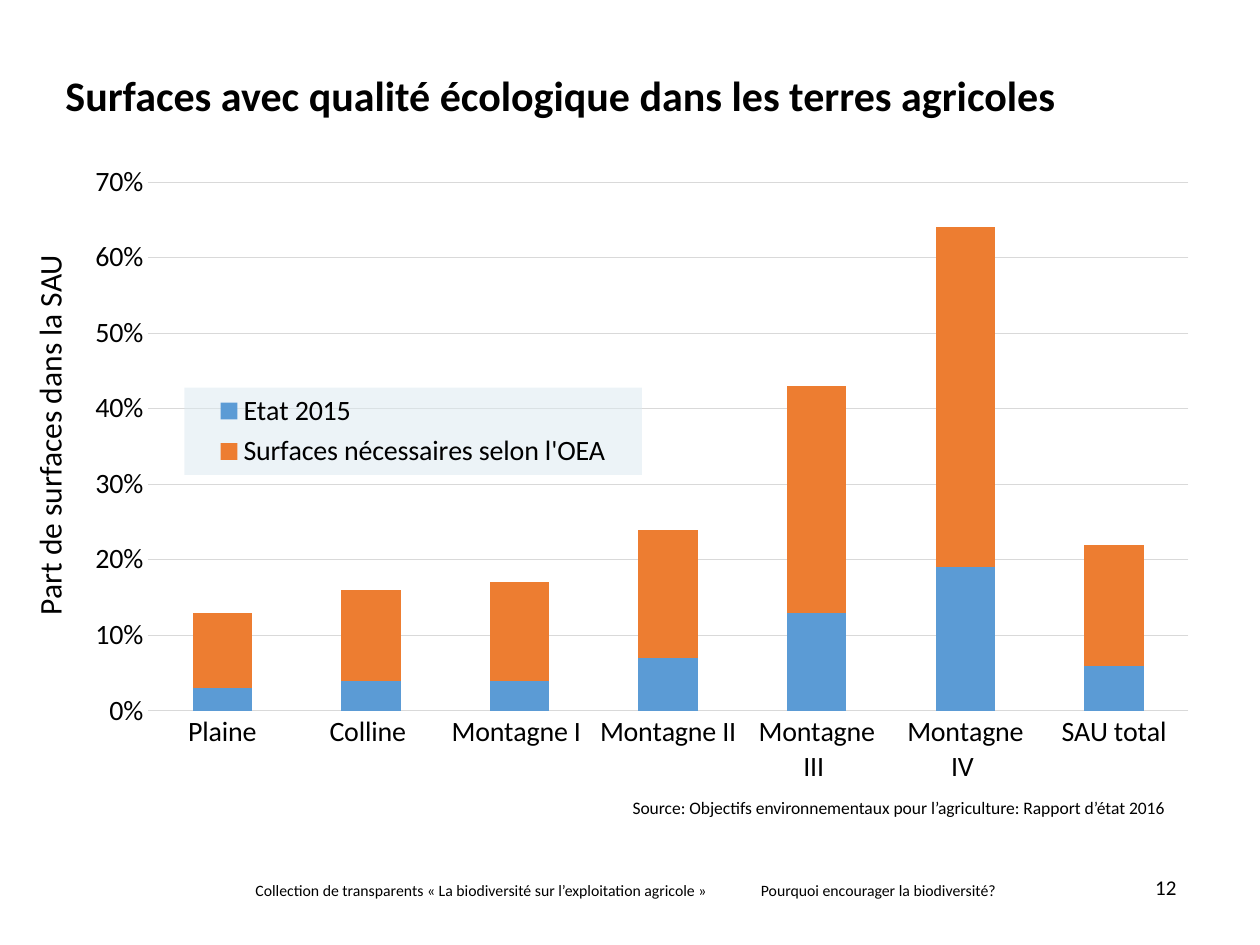
"""Build the slide on ecological quality areas in farmland, with a stacked column chart."""
from dataclasses import dataclass

import pptx
import pptx.chart.data
import pptx.dml.color
import pptx.enum.chart
import pptx.enum.text
import pptx.oxml
import pptx.oxml.ns
import pptx.util

Cm = pptx.util.Cm
Pt = pptx.util.Pt
RGB = pptx.dml.color.RGBColor.from_string
ALIGN = pptx.enum.text.PP_ALIGN
ANCHOR = pptx.enum.text.MSO_ANCHOR
XL = pptx.enum.chart


@dataclass(frozen=True)
class Theme:
    font: str = "Calibri"
    text: str = "000000"
    grid: str = "D9D9D9"
    legend: str = "DBE9F0"
    state: str = "5B9BD5"
    needed: str = "ED7D31"
    title: float = 24
    axis_title: float = 18
    chart: float = 16
    number: float = 12
    source: float = 10
    footer: float = 9


theme = Theme()
prs = pptx.Presentation()
prs.slide_width, prs.slide_height = Cm(25.4), Cm(19.05)
s = prs.slides.add_slide(prs.slide_layouts[6])


def add_text(text, *, box, size, bold=False, align=ALIGN.LEFT, anchor=ANCHOR.TOP,
             inset=(0.25, 0.13), spacing=None, wrap=True, rotation=0):
    sp = s.shapes.add_textbox(*map(Cm, box))
    sp.rotation = rotation
    tf = sp.text_frame
    tf.word_wrap = wrap
    tf.vertical_anchor = anchor
    tf.margin_left = tf.margin_right = Cm(inset[0])
    tf.margin_top = tf.margin_bottom = Cm(inset[1])
    p = tf.paragraphs[0]
    p.alignment = align
    p.line_spacing = spacing
    r = p.add_run()
    r.text = text
    r.font.name = theme.font
    r.font.size = Pt(size)
    r.font.bold = bold
    r.font.color.rgb = RGB(theme.text)
    return r


add_text("Collection de transparents « La biodiversité sur l’exploitation agricole »",
         box=(4.9, 17.63, 10.59, 0.64), size=theme.footer)
add_text("Pourquoi encourager la biodiversité?",
         box=(15.09, 17.63, 5.36, 0.64), size=theme.footer)
add_text("Surfaces avec qualité écologique dans les terres agricoles",
         box=(1.32, 1.52, 22.4, 1.75), size=theme.title, bold=True, inset=(0, 0), spacing=0.9)
add_text("Source: Objectifs environnementaux pour l’agriculture: Rapport d’état 2016",
         box=(12.09, 15.93, 11.63, 0.69), size=theme.source, align=ALIGN.RIGHT)
number = add_text("12", box=(21.51, 17.27, 2.21, 0.99), size=theme.number,
                  align=ALIGN.RIGHT, anchor=ANCHOR.BOTTOM, inset=(0, 0.13))
number.font._element.set("spc", "20")
add_text("Part de surfaces dans la SAU", box=(-2.97, 8.18, 7.92, 1.02),
         size=theme.axis_title, wrap=False, rotation=270)

data = pptx.chart.data.CategoryChartData(number_format="0%")
data.categories = ["Plaine", "Colline ", "Montagne I ", "Montagne II ",
                   "Montagne III ", "Montagne IV ", "SAU total"]
data.add_series("Etat 2015", [0.03, 0.04, 0.04, 0.07, 0.13, 0.19, 0.06])
data.add_series("Surfaces nécessaires selon l'OEA", [0.1, 0.12, 0.13, 0.17, 0.3, 0.45, 0.16])
chart = s.shapes.add_chart(XL.XL_CHART_TYPE.COLUMN_STACKED, Cm(1.3), Cm(3.33),
                           Cm(23.7), Cm(12.6), data).chart
chart.has_title = False
chart.font.name = theme.font
chart.font.size = Pt(theme.chart)
chart.font.color.rgb = RGB(theme.text)

plot = chart.plots[0]
plot.gap_width, plot.overlap, plot.vary_by_categories = 150, 100, False
for series, color in zip(plot.series, (theme.state, theme.needed)):
    series.format.fill.solid()
    series.format.fill.fore_color.rgb = RGB(color)

cat_axis, val_axis = chart.category_axis, chart.value_axis
for axis in (cat_axis, val_axis):
    axis.major_tick_mark = axis.minor_tick_mark = XL.XL_TICK_MARK.NONE
val_axis.minimum_scale, val_axis.maximum_scale, val_axis.major_unit = 0, 0.7, 0.1
val_axis.tick_labels.number_format = "0%"
val_axis.tick_labels.number_format_is_linked = False
val_axis.format.line.fill.background()
for line in (cat_axis.format.line, val_axis.major_gridlines.format.line):
    line.color.rgb = RGB(theme.grid)
    line.width = Pt(0.75)

chart.has_legend = True
legend = chart.legend
legend.position = XL.XL_LEGEND_POSITION.BOTTOM
legend.include_in_layout = False

ns = pptx.oxml.ns.nsdecls("c", "a")
qn = pptx.oxml.ns.qn
plot_area = chart._chartSpace.chart.plotArea
for old in plot_area.findall(qn("c:layout")):
    plot_area.remove(old)
for old in legend._element.findall(qn("c:layout")):
    legend._element.remove(old)
layouts = (
    (plot_area, 0, '<c:layoutTarget val="inner"/>', (0.071, 0.026, 0.885, 0.847)),
    (legend._element, 1, "", (0.102, 0.355, 0.389, 0.14)),
)
for parent, index, target, (x, y, w, h) in layouts:
    parent.insert(index, pptx.oxml.parse_xml(
        f'<c:layout {ns}><c:manualLayout>{target}<c:xMode val="edge"/><c:yMode val="edge"/>'
        f'<c:x val="{x}"/><c:y val="{y}"/><c:w val="{w}"/><c:h val="{h}"/>'
        f'</c:manualLayout></c:layout>'))
legend._element.find(qn("c:overlay")).addnext(pptx.oxml.parse_xml(
    f'<c:spPr {ns}><a:solidFill><a:srgbClr val="{theme.legend}"><a:alpha val="50000"/>'
    f'</a:srgbClr></a:solidFill><a:ln><a:noFill/></a:ln></c:spPr>'))

prs.save("out.pptx")
